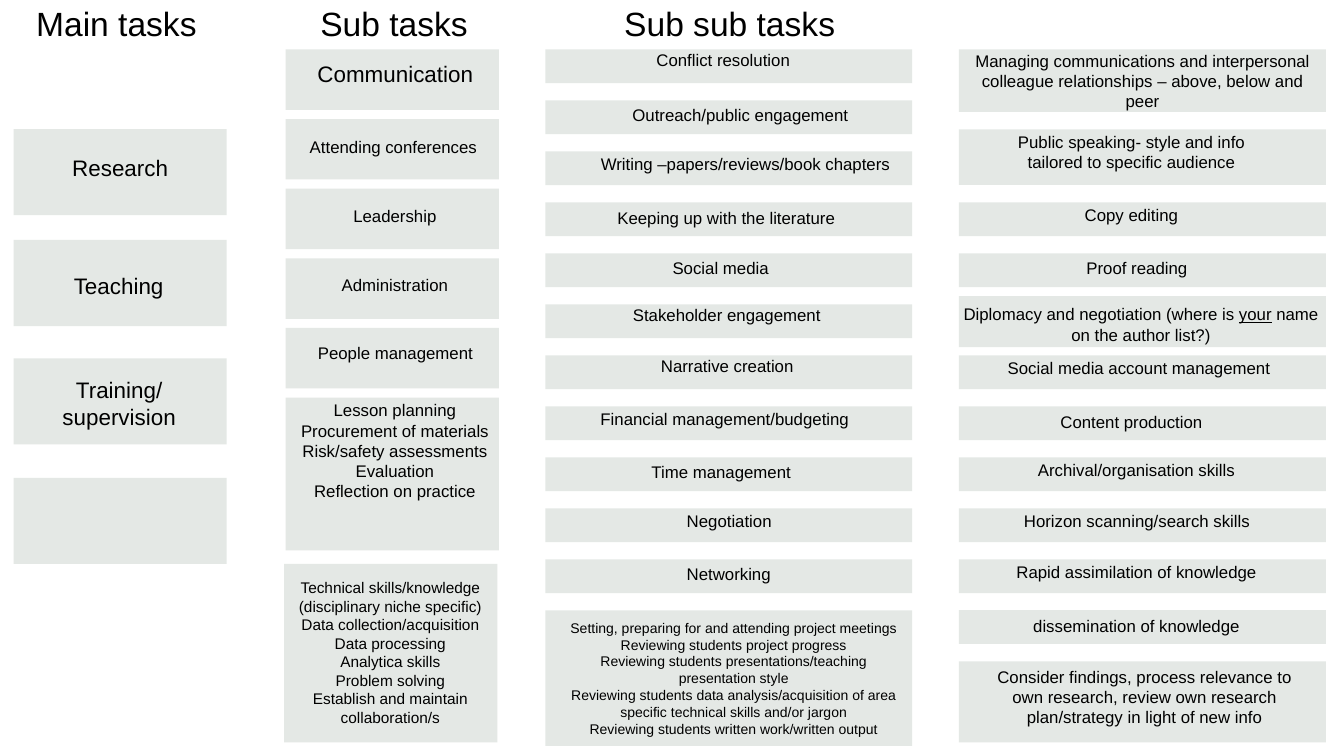
from pptx import Presentation
from pptx.dml.color import RGBColor
from pptx.enum.shapes import MSO_SHAPE as Shape
from pptx.enum.text import MSO_AUTO_SIZE as AutoSize, PP_ALIGN as Align
from pptx.util import Inches, Pt

THEME = {
    "font": "Arial",
    "ink": RGBColor.from_string("000000"),
    "card": RGBColor.from_string("E4E8E5"),
    "heading": 48, "large": 32, "body": 24, "small": 22, "tiny": 20,
}

# Grid, in inches
TOP = 0.98
NARROW, WIDE = 4.23, 7.28
SUB_PITCH = (7.89 - TOP) / 5
DETAIL_PITCH = (13.12 - TOP) / 12
MAIN_CARD, SUB_CARD, DETAIL_CARD = 1.71, 1.2, 0.67
TIGHT = 3.4  # labels narrower than this stay on one line

deck = Presentation()
deck.slide_width, deck.slide_height = Inches(26.67), Inches(15)
page = deck.slides.add_slide(deck.slide_layouts[6])


def add_card(left, top, width, height):
    card = page.shapes.add_shape(Shape.RECTANGLE, Inches(left), Inches(top),
                                 Inches(width), Inches(height))
    card.shadow.inherit = False
    card.fill.solid()
    card.fill.fore_color.rgb = THEME["card"]
    card.line.fill.background()


def add_label(centre, top, width, style, text, lines=1):
    """Centred label; line breaks part paragraphs, _underscores_ underline."""
    size = THEME[style]
    height = lines * size * 1.2 / 72 + 0.1
    box = page.shapes.add_textbox(Inches(centre - width / 2), Inches(top),
                                  Inches(width), Inches(height))
    frame = box.text_frame
    frame.word_wrap = width >= TIGHT
    frame.auto_size = AutoSize.SHAPE_TO_FIT_TEXT
    for index, line in enumerate(text.split("\n")):
        para = frame.add_paragraph() if index else frame.paragraphs[0]
        para.alignment = Align.CENTER
        para.font.name, para.font.size = THEME["font"], Pt(size)
        para.font.color.rgb = THEME["ink"]
        for part, words in enumerate(line.split("_")):
            span = para.add_run()
            span.text = words
            if part % 2:
                span.font.underline = True


# Column headings: centre, width, text
for centre, width, text in [(2.31, 3.54, "Main tasks"),
                            (7.82, 3.74, "Sub tasks"),
                            (14.48, 5.02, "Sub sub tasks")]:
    add_label(centre, 0, width, "heading", text)

# Cards: row, card height, then label shift from the card's centre, drop from
# its top, width, style, text and number of lines
main_tasks = [
    (0, MAIN_CARD, 0, 0.44, 2.12, "large", "Research"),
    (2.2, MAIN_CARD, -0.03, 0.58, 2.04, "large", "Teaching"),
    (4.55, MAIN_CARD, -0.02, 0.31, 3.64, "large", "Training/\nsupervision", 2),
    (6.92, MAIN_CARD),
]
sub_tasks = [
    (0, SUB_CARD, 0.06, 0.17, 3.32, "large", "Communication"),
    (1, SUB_CARD, 0.02, 0.3, 4.72, "body", "Attending conferences"),
    (2, SUB_CARD, 0.05, 0.28, 2.68, "body", "Leadership"),
    (3, SUB_CARD, 0.05, 0.27, 4.54, "body", "Administration"),
    (4, SUB_CARD, 0.06, 0.25, 3.5, "body", "People management"),
    (5, 3.03, 0.05, 0, 4.02, "body",
     "Lesson planning\nProcurement of materials\nRisk/safety assessments\n"
     "Evaluation\nReflection on practice", 5),
]
technical_tasks = [
    (0, 3.54, -0.01, 0.24, 4.73, "small",
     "Technical skills/knowledge (disciplinary niche specific)\n"
     "Data collection/acquisition\nData processing\nAnalytica skills\n"
     "Problem solving\nEstablish and maintain collaboration/s", 8),
]
sub_sub_tasks = [
    (0, DETAIL_CARD, -0.11, -0.05, 6.51, "body", "Conflict resolution"),
    (1, DETAIL_CARD, 0.23, 0.03, 7.06, "body", "Outreach/public engagement"),
    (2, DETAIL_CARD, 0.33, 0, 6.51, "body",
     "Writing –papers/reviews/book chapters"),
    (3, DETAIL_CARD, -0.05, 0.05, 7.06, "body", "Keeping up with the literature"),
    (4, DETAIL_CARD, -0.16, 0.04, 7.06, "body", "Social media"),
    (5, DETAIL_CARD, -0.04, -0.04, 6.51, "body", "Stakeholder engagement"),
    (6, DETAIL_CARD, -0.03, -0.04, 7.06, "body", "Narrative creation"),
    (7, DETAIL_CARD, -0.08, 0, 5.72, "body", "Financial management/budgeting"),
    (8, DETAIL_CARD, -0.15, 0.03, 5.72, "body", "Time management"),
    (9, DETAIL_CARD, 0.01, 0, 5.72, "body", "Negotiation"),
    (10, DETAIL_CARD, 0, 0.03, 2.53, "body", "Networking"),
    (11, 2.69, 0.1, 0.13, 6.91, "tiny",
     "Setting, preparing for and attending project meetings\n"
     "Reviewing students project progress\n"
     "Reviewing students presentations/teaching presentation style\n"
     "Reviewing students data analysis/acquisition of area specific "
     "technical skills and/or jargon\n"
     "Reviewing students written work/written output", 7),
]
further_tasks = [
    (0, 1.24, 0, -0.02, 6.9, "body",
     "Managing communications and interpersonal colleague relationships "
     "– above, below and peer", 3),
    (1.57, 1.1, -0.22, 0, 5.72, "body",
     "Public speaking- style and info tailored to specific audience", 2),
    (3, DETAIL_CARD, -0.22, 0, 2.08, "body", "Copy editing"),
    (4, DETAIL_CARD, -0.11, 0.03, 2.22, "body", "Proof reading"),
    (4.84, 1.01, -0.03, 0.11, 7.69, "body",
     "Diplomacy and negotiation (where is _your_ name on the author list?)", 2),
    (6, DETAIL_CARD, -0.07, 0, 6.66, "body", "Social media account management"),
    (7, DETAIL_CARD, -0.22, 0.05, 3.75, "body", "Content production"),
    (8, DETAIL_CARD, -0.12, 0, 5.56, "body", "Archival/organisation skills"),
    (9, DETAIL_CARD, -0.11, 0, 5.98, "body", "Horizon scanning/search skills"),
    (10, DETAIL_CARD, -0.12, 0, 5.71, "body", "Rapid assimilation of knowledge"),
    (11, DETAIL_CARD, -0.12, 0.06, 6.18, "body", "dissemination of knowledge"),
    (12, 1.61, 0.04, 0.06, 6.36, "body",
     "Consider findings, process relevance to own research, review own "
     "research plan/strategy in light of new info", 3),
]

# Columns: left, first top, row pitch, card width, cards
columns = [
    (0.27, 2.56, 1, NARROW, main_tasks),
    (5.67, TOP, SUB_PITCH, NARROW, sub_tasks),
    (5.64, 11.19, 1, NARROW, technical_tasks),
    (10.82, TOP, DETAIL_PITCH, WIDE, sub_sub_tasks),
    (19.03, TOP, DETAIL_PITCH, WIDE, further_tasks),
]
for left, first, pitch, card_width, cards in columns:
    for row, height, *label in cards:
        top = first + row * pitch
        add_card(left, top, card_width, height)
        if label:
            shift, drop, *rest = label
            add_label(left + card_width / 2 + shift, top + drop, *rest)

deck.save("out.pptx")
